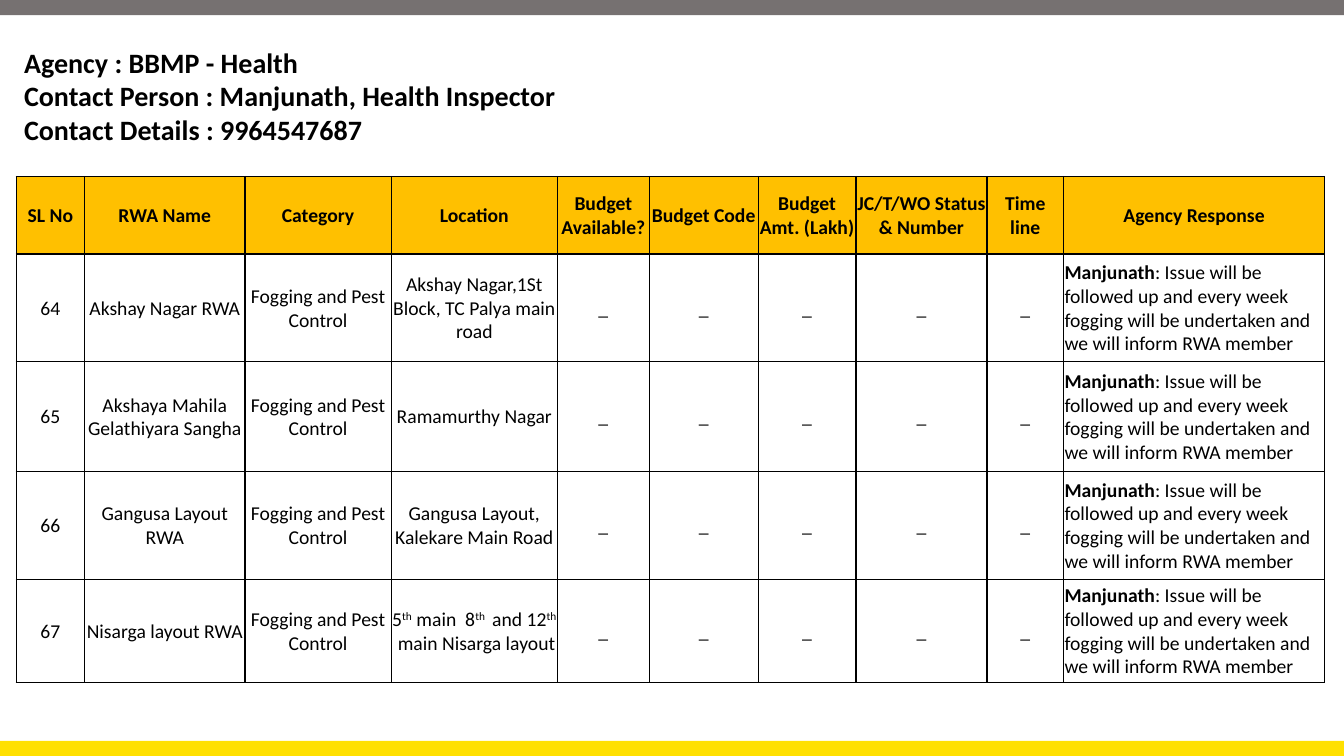
"""Build the agency response slide: contact details above a table of resident requests."""
from lxml import etree
from pptx import Presentation
from pptx.dml.color import RGBColor
from pptx.enum.shapes import MSO_SHAPE
from pptx.enum.text import MSO_ANCHOR, PP_ALIGN
from pptx.oxml.ns import qn
from pptx.util import Inches, Pt

RECTANGLE = MSO_SHAPE.RECTANGLE
MIDDLE = MSO_ANCHOR.MIDDLE
CENTER, LEFT = PP_ALIGN.CENTER, PP_ALIGN.LEFT
COLORS = {"text": "000000", "header": "FFC000", "top": "767171", "bottom": "FFE000"}
FONT = "Calibri"
COLUMN_WIDTHS = [0.68, 1.59, 1.45, 1.65, 0.91, 1.08, 0.97, 1.3, 0.76, 2.59]
ROW_HEIGHTS = [0.77, 1.07, 1.09, 1.07, 1.02]

DETAILS = [
    "Agency : BBMP - Health",
    "Contact Person : Manjunath, Health Inspector",
    "Contact Details : 9964547687",
]
HEADINGS = [
    "SL No", "RWA Name", "Category", "Location", "Budget Available?", "Budget Code",
    "Budget Amt. (Lakh)", "JC/T/WO Status & Number", "Time line", "Agency Response",
]
SUPER = {"baseline": 30}
NISARGA_LOCATION = [
    ("5", {}), ("th", SUPER), (" main  8", {}), ("th ", SUPER),
    (" and 12", {}), ("th ", SUPER), (" main Nisarga layout", {}),
]
REQUESTS = [
    ("64", "Akshay Nagar RWA", "Akshay Nagar,1St Block, TC Palya main road"),
    ("65", "Akshaya Mahila Gelathiyara Sangha", "Ramamurthy Nagar"),
    ("66", "Gangusa Layout RWA", "Gangusa Layout, Kalekare Main Road"),
    ("67", "Nisarga layout RWA", NISARGA_LOCATION),
]
CATEGORY = "Fogging and Pest Control"
BLANKS = ["_"] * 5
RESPONSE = [
    ("Manjunath", {"bold": True}),
    (": Issue will be followed up and every week fogging will be undertaken "
     "and we will inform RWA member", {}),
]


def write(para, text, size=14, bold=False, baseline=0):
    span = para.add_run()
    span.text = text
    span.font.name = FONT
    span.font.size = Pt(size)
    span.font.bold = bold
    span.font.color.rgb = RGBColor.from_string(COLORS["text"])
    if baseline:
        span.font._element.set("baseline", str(baseline * 1000))


def add_borders(cell):
    properties = cell._tc.get_or_add_tcPr()
    for side in ("lnL", "lnR", "lnT", "lnB"):
        line = etree.SubElement(properties, qn(f"a:{side}"), w=str(Pt(1)))
        fill = etree.SubElement(line, qn("a:solidFill"))
        etree.SubElement(fill, qn("a:srgbClr"), val=COLORS["text"])


deck = Presentation()
deck.slide_width, deck.slide_height = Inches(13.33), Inches(7.5)
page = deck.slides.add_slide(deck.slide_layouts[6])

bar_height = int(deck.slide_height * 0.02)
for name, top in (("bottom", deck.slide_height - bar_height), ("top", 0)):
    bar = page.shapes.add_shape(RECTANGLE, 0, top, deck.slide_width, bar_height)
    bar.shadow.inherit = False
    bar.fill.solid()
    bar.fill.fore_color.rgb = RGBColor.from_string(COLORS[name])
    bar.line.fill.background()

box = page.shapes.add_textbox(Inches(0.14), Inches(0.4), Inches(12.99), Inches(1.11))
frame = box.text_frame
frame.word_wrap = True
for index, detail in enumerate(DETAILS):
    para = frame.add_paragraph() if index else frame.paragraphs[0]
    write(para, detail, size=20, bold=True)

rows = [HEADINGS]
for number, association, location in REQUESTS:
    rows.append([number, association, CATEGORY, location, *BLANKS, RESPONSE])

table = page.shapes.add_table(
    len(rows), len(HEADINGS), Inches(0.16), Inches(1.75),
    Inches(sum(COLUMN_WIDTHS)), Inches(sum(ROW_HEIGHTS)),
).table
table.first_row = table.horz_banding = False
for column, width in zip(table.columns, COLUMN_WIDTHS):
    column.width = Inches(width)
for row, height in zip(table.rows, ROW_HEIGHTS):
    row.height = Inches(height)

for row_index, contents in enumerate(rows):
    is_header = row_index == 0
    for column_index, content in enumerate(contents):
        cell = table.cell(row_index, column_index)
        add_borders(cell)
        if is_header:
            cell.fill.solid()
            cell.fill.fore_color.rgb = RGBColor.from_string(COLORS["header"])
        else:
            cell.fill.background()
        cell.vertical_anchor = MIDDLE
        cell.margin_left = cell.margin_right = cell.margin_top = Inches(0.01)
        cell.margin_bottom = 0
        para = cell.text_frame.paragraphs[0]
        para.alignment = LEFT if content is RESPONSE else CENTER
        spans = [(content, {"bold": is_header})] if isinstance(content, str) else content
        for text, style in spans:
            write(para, text, **style)

deck.save("out.pptx")
